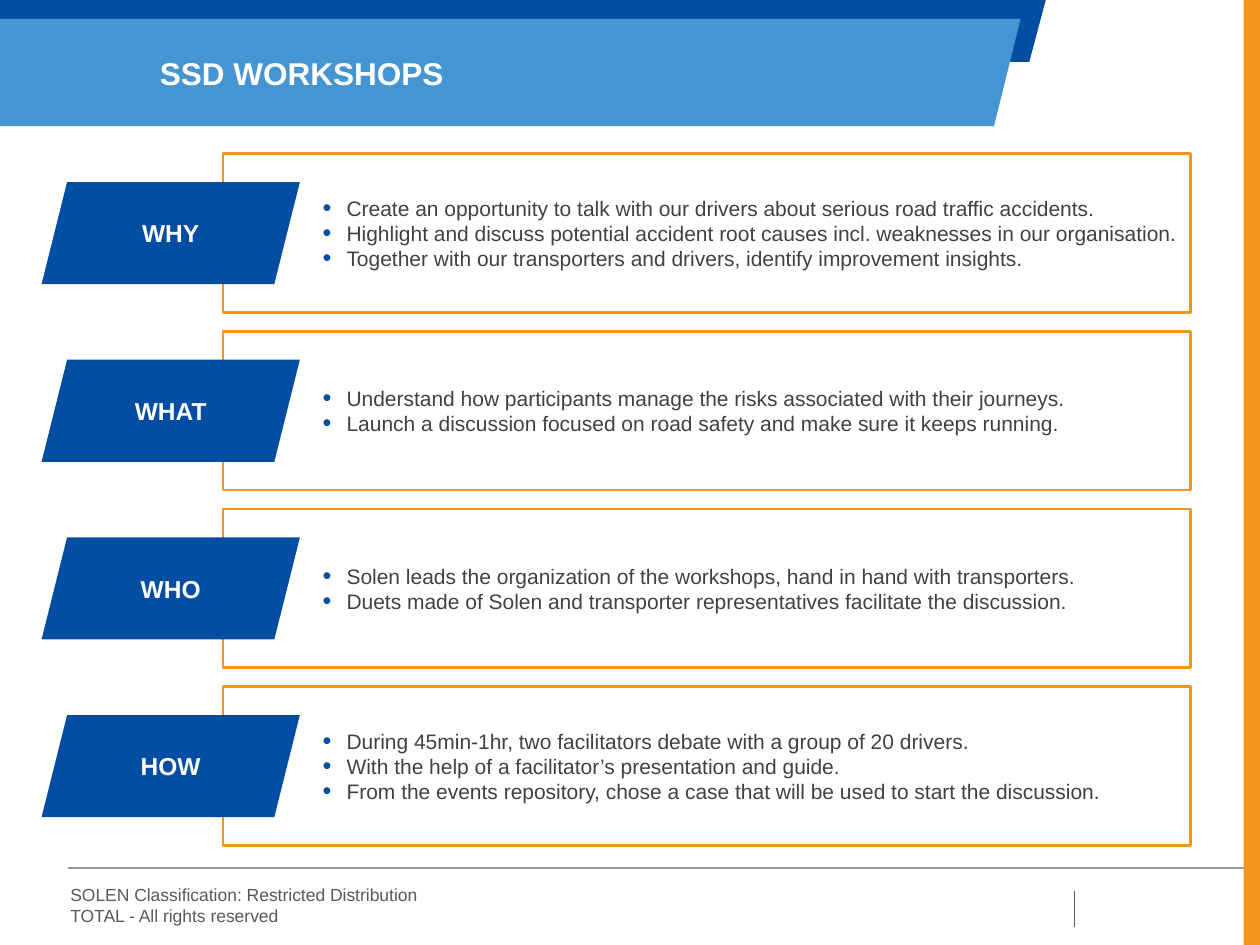
from lxml import etree
from pptx import Presentation
from pptx.dml.color import RGBColor
from pptx.enum.shapes import MSO_CONNECTOR, MSO_SHAPE
from pptx.enum.text import MSO_ANCHOR, PP_ALIGN
from pptx.oxml.ns import qn
from pptx.util import Inches, Pt

RECTANGLE = MSO_SHAPE.RECTANGLE
PARALLELOGRAM = MSO_SHAPE.PARALLELOGRAM
STRAIGHT = MSO_CONNECTOR.STRAIGHT
MIDDLE = MSO_ANCHOR.MIDDLE
LEFT, CENTER = PP_ALIGN.LEFT, PP_ALIGN.CENTER

ORANGE = RGBColor(0xF7, 0x94, 0x1D)
DARK_BLUE = RGBColor(0x03, 0x4E, 0xA2)
LIGHT_BLUE = RGBColor(0x44, 0x95, 0xD1)
WHITE = RGBColor(0xFF, 0xFF, 0xFF)
TEXT_GREY = RGBColor(0x41, 0x41, 0x41)
FOOTER_GREY = RGBColor(0x59, 0x59, 0x59)
RULE_GREY = RGBColor(0x99, 0x99, 0x99)

FIRST_ROW_TOP = 1.22
ROW_PITCH = 1.41
TOPICS = [
    ("WHY", [
        "Create an opportunity to talk with our drivers about serious road traffic accidents.",
        "Highlight and discuss potential accident root causes incl. weaknesses in our organisation.",
        "Together with our transporters and drivers, identify improvement insights.",
    ]),
    ("WHAT", [
        "Understand how participants manage the risks associated with their journeys.",
        "Launch a discussion focused on road safety and make sure it keeps running.",
    ]),
    ("WHO", [
        "Solen leads the organization of the workshops, hand in hand with transporters.",
        "Duets made of Solen and transporter representatives facilitate the discussion.",
    ]),
    ("HOW", [
        "During 45min-1hr, two facilitators debate with a group of 20 drivers.",
        "With the help of a facilitator’s presentation and guide.",
        "From the events repository, chose a case that will be used to start the discussion.",
    ]),
]


def paint(shape, color):
    shape.shadow.inherit = False
    shape.fill.solid()
    shape.fill.fore_color.rgb = color
    shape.line.fill.background()


def add_box(shapes, kind, left, top, width, height):
    return shapes.add_shape(kind, Inches(left), Inches(top), Inches(width), Inches(height))


def add_banner(slide, points, color):
    start, *others = [(Inches(x), Inches(y)) for x, y in points]
    builder = slide.shapes.build_freeform(*start, scale=1.0)
    builder.add_line_segments(others, close=True)
    paint(builder.convert_to_shape(), color)


def add_rule(slide, start, end, color):
    rule = slide.shapes.add_connector(STRAIGHT, *[Inches(value) for value in start + end])
    rule.line.color.rgb = color
    rule.line.width = Pt(0.75)
    etree.SubElement(rule._element.spPr, qn("a:effectLst"))


def set_margins(frame, left, top, right, bottom):
    frame.margin_left, frame.margin_top = Inches(left), Inches(top)
    frame.margin_right, frame.margin_bottom = Inches(right), Inches(bottom)


def add_bullet(paragraph):
    properties = paragraph._p.get_or_add_pPr()
    properties.set("marL", str(Inches(0.19)))
    properties.set("indent", str(-Inches(0.19)))
    color = etree.SubElement(properties, qn("a:buClr"))
    etree.SubElement(color, qn("a:srgbClr"), val=str(DARK_BLUE))
    etree.SubElement(properties, qn("a:buSzPct"), val="120000")
    etree.SubElement(properties, qn("a:buFont"), typeface="Arial")
    etree.SubElement(properties, qn("a:buChar"), char="•")


def write_lines(frame, lines, size, color, bold=False, align=LEFT, bulleted=False):
    frame.word_wrap = True
    frame.text = "\n".join(lines)
    for paragraph in frame.paragraphs:
        if bulleted:
            add_bullet(paragraph)
        paragraph.alignment = align
        font = paragraph.font
        font.name, font.size, font.bold = "Arial", Pt(size), bold
        font.color.rgb = color


def add_text(slide, left, top, width, height, lines, size, color, bold=False):
    text_box = slide.shapes.add_textbox(Inches(left), Inches(top), Inches(width), Inches(height))
    write_lines(text_box.text_frame, lines, size, color, bold)
    return text_box.text_frame


def add_topic(slide, top, label, points):
    """Add an outlined box of bullets with its slanted label."""
    shapes = slide.shapes.add_group_shape().shapes
    box = add_box(shapes, RECTANGLE, 1.77, top, 7.68, 1.26)
    box.shadow.inherit = False
    box.fill.background()
    box.line.color.rgb = ORANGE
    box.line.width = Pt(1.5)
    box.text_frame.vertical_anchor = MIDDLE
    set_margins(box.text_frame, 0.79, 0.05, 0, 0.05)
    write_lines(box.text_frame, points, 12, TEXT_GREY, bulleted=True)

    tag = add_box(shapes, PARALLELOGRAM, 0.33, top + 0.225, 2.05, 0.81)
    paint(tag, DARK_BLUE)
    tag.text_frame.vertical_anchor = MIDDLE
    write_lines(tag.text_frame, [label], 14, WHITE, bold=True, align=CENTER)


def add_frame(slide):
    """Add the side bar, footer and header banners."""
    paint(add_box(slide.shapes, RECTANGLE, 9.87, 0, 0.13, 7.5), ORANGE)
    add_rule(slide, (0.54, 6.89), (9.87, 6.89), RULE_GREY)
    add_rule(slide, (8.53, 7.36), (8.53, 7.07), FOOTER_GREY)
    add_text(slide, 0.46, 6.97, 5.39, 0.44,
             ["SOLEN Classification: Restricted Distribution", "TOTAL - All rights reserved"],
             10, FOOTER_GREY)
    add_banner(slide, [(0, 0), (8.3, 0), (8.17, 0.49), (0, 0.49)], DARK_BLUE)
    add_banner(slide, [(0, 0.15), (8.1, 0.15), (7.89, 1), (0, 1)], LIGHT_BLUE)


def main():
    presentation = Presentation()
    presentation.slide_width, presentation.slide_height = Inches(10), Inches(7.5)
    slide = presentation.slides.add_slide(presentation.slide_layouts[6])
    add_frame(slide)
    title = add_text(slide, 1.27, 0.43, 6, 0.3, ["SSD WORKSHOPS"], 18, WHITE, bold=True)
    set_margins(title, 0, 0, 0, 0)
    for row, (label, points) in enumerate(TOPICS):
        add_topic(slide, FIRST_ROW_TOP + row * ROW_PITCH, label, points)
    presentation.save("out.pptx")


if __name__ == "__main__":
    main()
